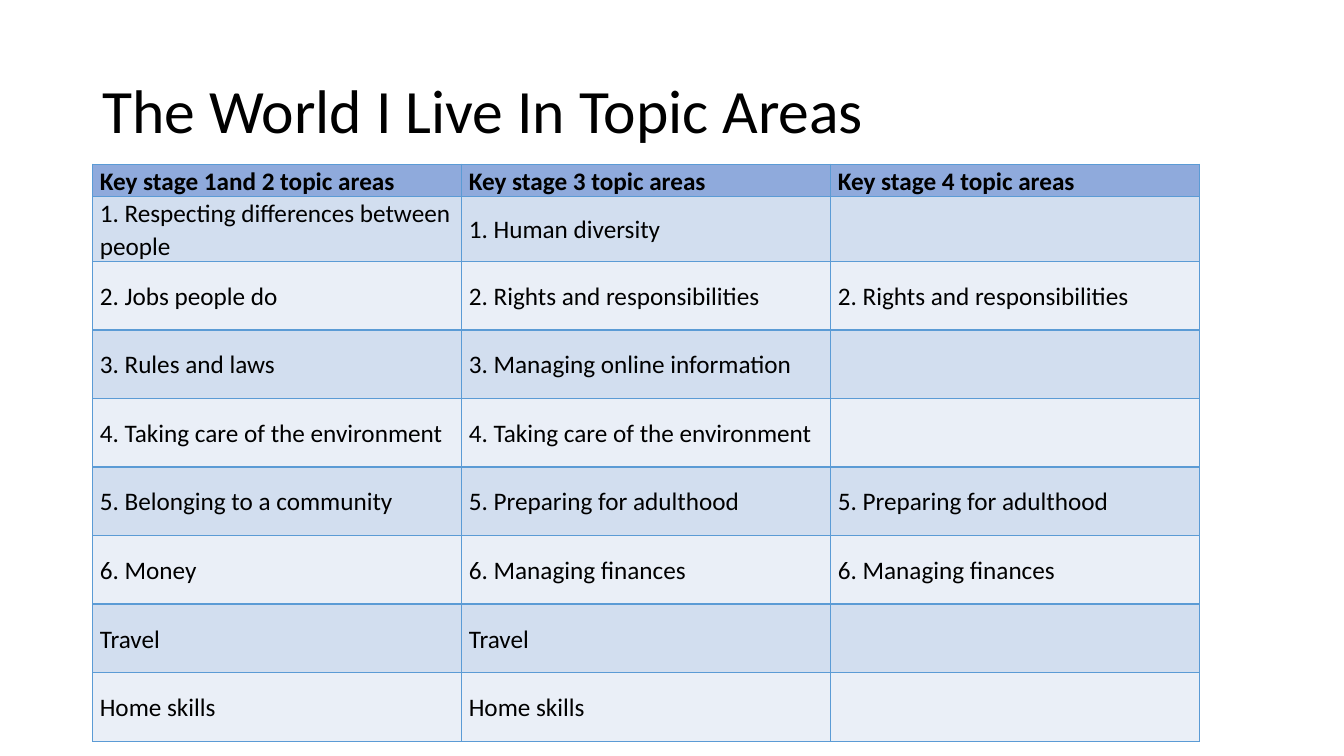
from lxml.etree import SubElement
from pptx import Presentation
from pptx.dml.color import RGBColor
from pptx.enum.text import MSO_ANCHOR
from pptx.oxml.ns import qn
from pptx.util import Inches, Pt

BLACK = RGBColor(0x00, 0x00, 0x00)
HEADER_BLUE = RGBColor(0x8F, 0xAA, 0xDC)
BAND_DARK = RGBColor(0xD2, 0xDE, 0xEF)
BAND_LIGHT = RGBColor(0xEA, 0xEF, 0xF7)
BORDER_BLUE = RGBColor(0x5B, 0x9B, 0xD5)

TOPIC_ROWS = [
    ("Key stage 1and 2 topic areas", "Key stage 3 topic areas", "Key stage 4 topic areas"),
    ("1. Respecting differences between people", "1. Human diversity", ""),
    ("2. Jobs people do", "2. Rights and responsibilities", "2. Rights and responsibilities"),
    ("3. Rules and laws", "3. Managing online information", ""),
    ("4. Taking care of the environment", "4. Taking care of the environment", ""),
    ("5. Belonging to a community", "5. Preparing for adulthood", "5. Preparing for adulthood"),
    ("6. Money", "6. Managing finances", "6. Managing finances"),
    ("Travel", "Travel", ""),
    ("Home skills", "Home skills", ""),
]
COLUMN_WIDTH = 3.66
ROW_HEIGHTS = [0.31, 0.59] + [0.68] * (len(TOPIC_ROWS) - 2)


class SlideBuilder:
    font_name = "Calibri"

    def __init__(self, slide):
        self.slide = slide

    def add_text(self, frame, text, size, spacing, bold=False):
        paragraph = frame.paragraphs[0]
        paragraph.line_spacing = spacing
        run = paragraph.add_run()
        run.text = text
        run.font.name = self.font_name
        run.font.size = Pt(size)
        run.font.bold = bold
        run.font.color.rgb = BLACK

    def title(self, text, left, top, width, height):
        box = self.slide.shapes.add_textbox(
            Inches(left), Inches(top), Inches(width), Inches(height))
        frame = box.text_frame
        frame.word_wrap = True
        frame.vertical_anchor = MSO_ANCHOR.MIDDLE
        self.add_text(frame, text, 44, 0.9)

    def borders(self, cell):
        properties = cell._tc.get_or_add_tcPr()
        for side in ("a:lnL", "a:lnR", "a:lnT", "a:lnB"):
            line = SubElement(properties, qn(side), w=str(Pt(1)))
            fill = SubElement(line, qn("a:solidFill"))
            SubElement(fill, qn("a:srgbClr"), val=str(BORDER_BLUE))

    def cell(self, cell, text, color, bold):
        cell.margin_left = cell.margin_right = Inches(0.07)
        cell.margin_top = cell.margin_bottom = 0
        cell.vertical_anchor = MSO_ANCHOR.MIDDLE
        self.borders(cell)
        cell.fill.solid()
        cell.fill.fore_color.rgb = color
        if text:
            self.add_text(cell.text_frame, text, 18, 1.07, bold)

    def table(self, rows, left, top, column_width, row_heights):
        column_count = len(rows[0])
        table = self.slide.shapes.add_table(
            len(rows), column_count, Inches(left), Inches(top),
            Inches(column_width * column_count), Inches(sum(row_heights))).table
        for column in table.columns:
            column.width = Inches(column_width)
        for index, (texts, height) in enumerate(zip(rows, row_heights)):
            table.rows[index].height = Inches(height)
            is_header = index == 0
            band = BAND_DARK if index % 2 else BAND_LIGHT
            color = HEADER_BLUE if is_header else band
            for cell, text in zip(table.rows[index].cells, texts):
                self.cell(cell, text, color, is_header)


def main():
    presentation = Presentation()
    presentation.slide_width = Inches(13.33)
    presentation.slide_height = Inches(7.5)
    builder = SlideBuilder(presentation.slides.add_slide(presentation.slide_layouts[6]))

    # Heading
    builder.title("The World I Live In Topic Areas", 0.92, 0.4, 11.5, 1.45)

    # Topics by key stage
    builder.table(TOPIC_ROWS, 0.92, 1.63, COLUMN_WIDTH, ROW_HEIGHTS)

    presentation.save("out.pptx")


if __name__ == "__main__":
    main()
